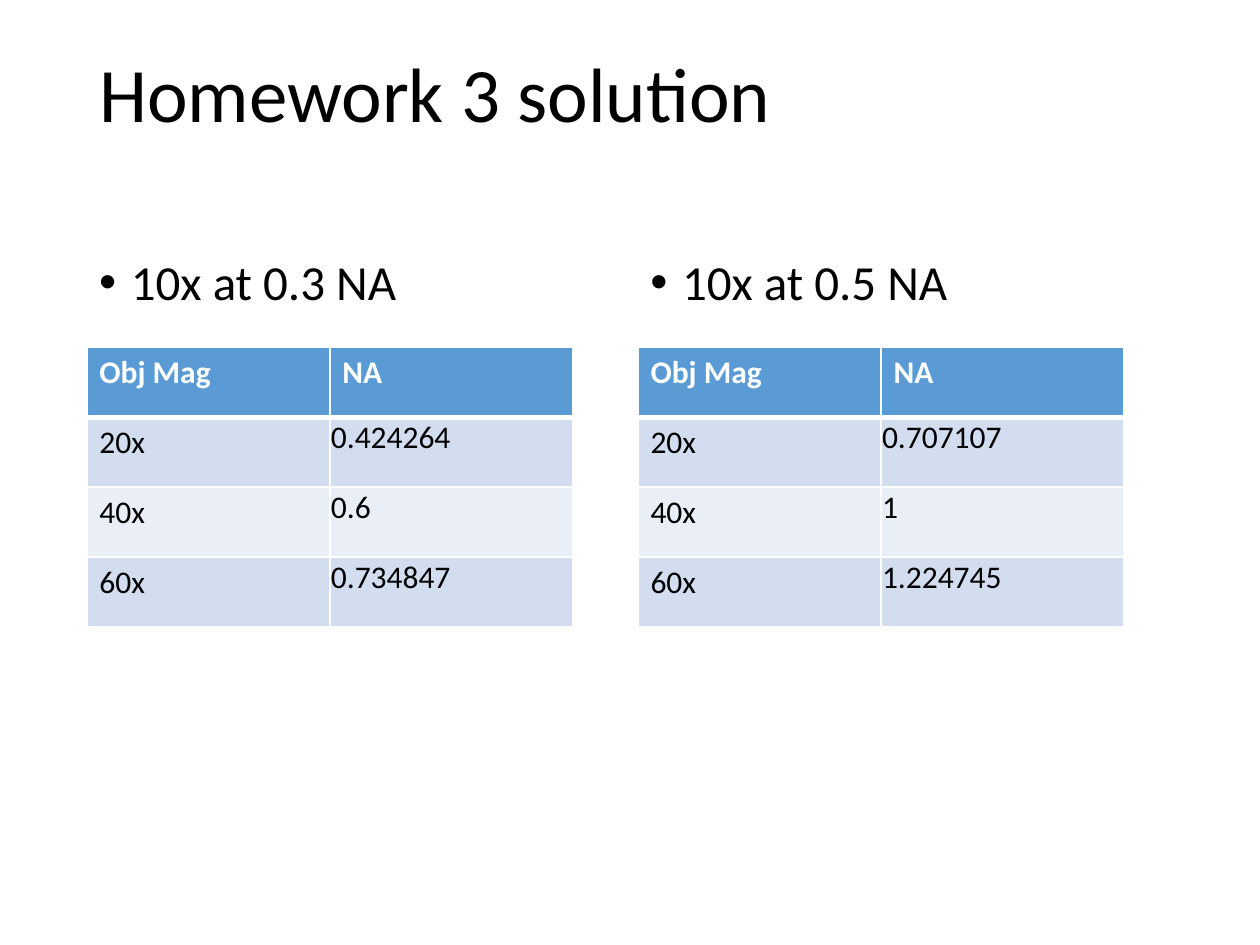
from dataclasses import dataclass

from lxml.etree import SubElement
from pptx import Presentation
from pptx.dml.color import RGBColor
from pptx.enum.text import MSO_ANCHOR
from pptx.oxml.ns import qn
from pptx.util import Cm, Pt

FONT = "Calibri"
COLORS = {
    "text": "000000",
    "white": "FFFFFF",
    "header": "5B9BD5",
    "odd": "D2DEEF",
    "even": "EAEFF7",
}
HEADINGS = ("Obj Mag", "NA")
MAGNIFICATIONS = ("20x", "40x", "60x")
MARGIN = 1.75
COLUMN_STEP = 11.11
CELL_WIDTH, CELL_HEIGHT = 4.9, 1.41


@dataclass
class Solution:
    heading: str
    apertures: tuple[str, ...]


SOLUTIONS = (
    Solution("10x at 0.3 NA", ("0.424264", "0.6", "0.734847")),
    Solution("10x at 0.5 NA", ("0.707107", "1", "1.224745")),
)


def write(tf, text: str, *, size: float, color: str = "text", bold: bool = False,
          line_spacing: float | None = None, space_before: float = 0,
          bullet: bool = False) -> None:
    p = tf.paragraphs[0]
    p.space_before = Pt(space_before)
    if line_spacing:
        p.line_spacing = line_spacing
    if bullet:
        pPr = p._p.get_or_add_pPr()
        indent = Cm(0.64)
        pPr.set("marL", str(indent))
        pPr.set("indent", str(-indent))
        SubElement(pPr, qn("a:buFont"), typeface="Arial")
        SubElement(pPr, qn("a:buChar"), char="•")
    r = p.add_run()
    r.text = text
    r.font.name = FONT
    r.font.size = Pt(size)
    r.font.bold = bold
    r.font.color.rgb = RGBColor.from_string(COLORS[color])


def add_text(s, text: str, left: float, top: float, width: float, height: float,
             **fmt) -> None:
    sp = s.shapes.add_textbox(Cm(left), Cm(top), Cm(width), Cm(height))
    tf = sp.text_frame
    tf.word_wrap = True
    tf.vertical_anchor = MSO_ANCHOR.TOP
    write(tf, text, line_spacing=0.9, **fmt)


def set_borders(cell, top: float, bottom: float) -> None:
    tcPr = cell._tc.get_or_add_tcPr()
    for side, width in (("L", 1), ("R", 1), ("T", top), ("B", bottom)):
        ln = SubElement(tcPr, qn(f"a:ln{side}"), w=str(Pt(width)))
        fill = SubElement(ln, qn("a:solidFill"))
        SubElement(fill, qn("a:srgbClr"), val=COLORS["white"])


def add_solution_table(s, solution: Solution, left: float, top: float) -> None:
    rows = (HEADINGS, *zip(MAGNIFICATIONS, solution.apertures))
    table = s.shapes.add_table(
        len(rows), len(HEADINGS), Cm(left), Cm(top),
        Cm(CELL_WIDTH * len(HEADINGS)), Cm(CELL_HEIGHT * len(rows)),
    ).table
    for i, row in enumerate(rows):
        is_header = i == 0
        fill = "header" if is_header else "odd" if i % 2 else "even"
        for j, text in enumerate(row):
            cell = table.cell(i, j)
            set_borders(cell, top=3 if i == 1 else 1, bottom=3 if is_header else 1)
            cell.fill.solid()
            cell.fill.fore_color.rgb = RGBColor.from_string(COLORS[fill])
            if j and not is_header:
                cell.margin_left = cell.margin_right = cell.margin_top = Cm(0.02)
                cell.margin_bottom = 0
            write(cell.text_frame, text, size=18, bold=is_header,
                  color="white" if is_header else "text")


def main() -> None:
    prs = Presentation()
    prs.slide_width, prs.slide_height = Cm(25.4), Cm(19.05)
    s = prs.slides.add_slide(prs.slide_layouts[6])
    add_text(s, "Homework 3 solution", MARGIN, 1.01, 21.9, 3.68, size=44)
    for i, solution in enumerate(SOLUTIONS):
        left = MARGIN + i * COLUMN_STEP
        add_text(s, solution.heading, left, 5.07, 10.8, 12.09,
                 size=28, space_before=10, bullet=True)
        add_solution_table(s, solution, left, 7)
    prs.save("out.pptx")


if __name__ == "__main__":
    main()
